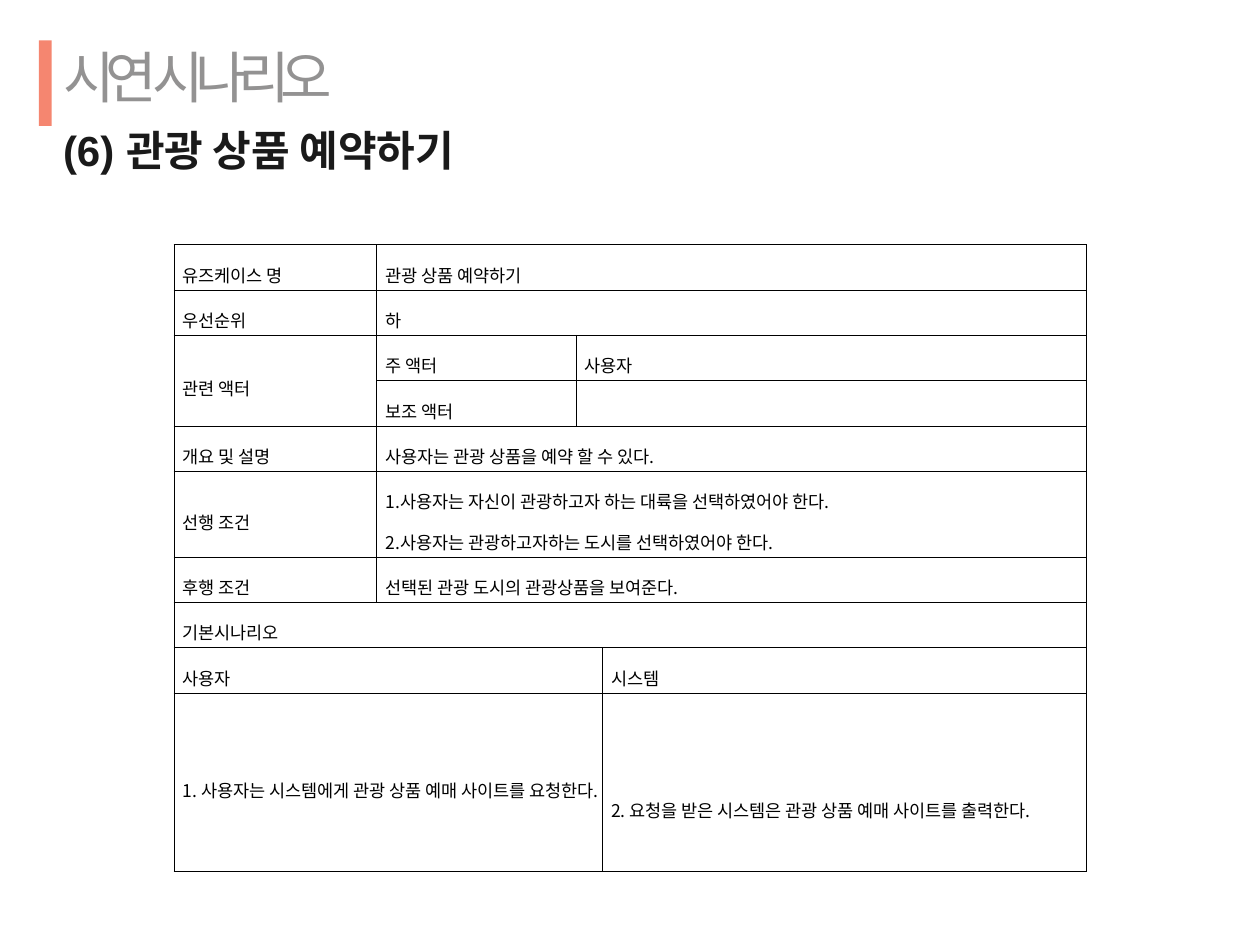
from dataclasses import dataclass

from lxml.etree import SubElement
from pptx import Presentation
from pptx.dml.color import RGBColor
from pptx.enum.shapes import MSO_SHAPE as Shape
from pptx.enum.text import MSO_ANCHOR as Anchor, MSO_AUTO_SIZE as AutoSize, PP_ALIGN as Align
from pptx.oxml.ns import qn
from pptx.util import Inches, Pt


@dataclass(frozen=True)
class Theme:
    accent: RGBColor = RGBColor(0xF5, 0x86, 0x70)
    heading: RGBColor = RGBColor(0x93, 0x92, 0x92)
    subheading: RGBColor = RGBColor(0x1A, 0x1A, 0x1A)
    body: RGBColor = RGBColor(0, 0, 0)
    border: str = "000000"
    border_width: float = 0.28
    heading_size: int = 32
    subheading_size: int = 24
    body_size: int = 10
    latin_font: str = "Arial"
    korean_font: str = "Noto Sans CJK KR"


THEME = Theme()


@dataclass(frozen=True)
class TextStyle:
    font: str
    size: int
    color: RGBColor
    bold: bool = False
    tracking: int = 0  # points between letters


@dataclass(frozen=True)
class TableEntry:
    row: int
    column: int
    text: str = ""
    columns: int = 1
    rows: int = 1
    top_margin: float = 0.02


HEADING = TextStyle(THEME.latin_font, THEME.heading_size, THEME.heading, tracking=-5)
SUBHEADING = TextStyle(THEME.latin_font, THEME.subheading_size, THEME.subheading, bold=True)
BODY = TextStyle(THEME.korean_font, THEME.body_size, THEME.body)

COLUMN_WIDTHS = [1.61, 1.58, 0.21, 3.84]
ROW_HEIGHTS = [0.36] * 5 + [0.67] + [0.36] * 3 + [1.42]
ENTRIES = [
    TableEntry(0, 0, "유즈케이스 명"),
    TableEntry(0, 1, "관광 상품 예약하기", columns=3),
    TableEntry(1, 0, "우선순위"),
    TableEntry(1, 1, "하", columns=3),
    TableEntry(2, 0, "관련 액터", rows=2),
    TableEntry(2, 1, "주 액터"),
    TableEntry(2, 2, "사용자", columns=2),
    TableEntry(3, 1, "보조 액터"),
    TableEntry(3, 2, columns=2),
    TableEntry(4, 0, "개요 및 설명"),
    TableEntry(4, 1, "사용자는 관광 상품을 예약 할 수 있다.", columns=3),
    TableEntry(5, 0, "선행 조건"),
    TableEntry(5, 1, "1.사용자는 자신이 관광하고자 하는 대륙을 선택하였어야 한다.\n"
                     "2.사용자는 관광하고자하는 도시를 선택하였어야 한다.", columns=3),
    TableEntry(6, 0, "후행 조건"),
    TableEntry(6, 1, "선택된 관광 도시의 관광상품을 보여준다.", columns=3),
    TableEntry(7, 0, "기본시나리오", columns=4),
    TableEntry(8, 0, "사용자", columns=3),
    TableEntry(8, 3, "시스템"),
    TableEntry(9, 0, "1. 사용자는 시스템에게 관광 상품 예매 사이트를 요청한다.", columns=3),
    TableEntry(9, 3, "2. 요청을 받은 시스템은 관광 상품 예매 사이트를 출력한다.", top_margin=0.34),
]


def style_paragraph(paragraph, style: TextStyle) -> None:
    font = paragraph.font
    font.name, font.size, font.bold = style.font, Pt(style.size), style.bold
    font.color.rgb = style.color
    # Letter spacing and the East Asian typeface have no public property
    properties = paragraph._p.pPr.find(qn("a:defRPr"))
    properties.set("spc", str(style.tracking * 100))
    east_asian = SubElement(properties, qn("a:ea"), typeface=THEME.korean_font)
    properties.find(qn("a:latin")).addnext(east_asian)


def add_borders(cell) -> None:
    properties = cell._tc.get_or_add_tcPr()
    for index, side in enumerate(("lnL", "lnR", "lnT", "lnB")):
        line = SubElement(properties, qn(f"a:{side}"), w=str(Pt(THEME.border_width)))
        fill = SubElement(line, qn("a:solidFill"))
        SubElement(fill, qn("a:srgbClr"), val=THEME.border)
        properties.insert(index, line)  # borders come before the fill


def add_accent_bar(slide) -> None:
    bar = slide.shapes.add_shape(
        Shape.RECTANGLE, Inches(0.31), Inches(0.32), Inches(0.1), Inches(0.68))
    bar.shadow.inherit = False
    bar.fill.solid()
    bar.fill.fore_color.rgb = THEME.accent
    bar.line.fill.background()


def fill_title(slide) -> None:
    title = slide.shapes.title
    title.left, title.top = Inches(0.49), Inches(0.36)
    title.width, title.height = Inches(6.57), Inches(2.59)
    frame = title.text_frame
    frame.word_wrap, frame.auto_size = True, AutoSize.NONE
    frame.vertical_anchor = Anchor.TOP
    frame.margin_left = Inches(0.01)
    frame.margin_top = frame.margin_right = frame.margin_bottom = 0
    frame.text = "시연 시나리오\n(6) 관광 상품 예약하기"
    for paragraph, style in zip(frame.paragraphs, (HEADING, SUBHEADING)):
        paragraph.alignment = Align.LEFT
        paragraph.line_spacing = Pt(37)
        style_paragraph(paragraph, style)


def fill_entry(table, entry: TableEntry) -> None:
    cell = table.cell(entry.row, entry.column)
    if entry.columns > 1 or entry.rows > 1:
        cell.merge(table.cell(entry.row + entry.rows - 1, entry.column + entry.columns - 1))
    cell.vertical_anchor = Anchor.MIDDLE
    cell.margin_left = cell.margin_right = Inches(0.07)
    cell.margin_top, cell.margin_bottom = Inches(entry.top_margin), Inches(0.02)
    cell.text_frame.text = entry.text
    for paragraph in cell.text_frame.paragraphs:
        paragraph.alignment = Align.JUSTIFY
        paragraph.line_spacing = 1.6
        style_paragraph(paragraph, BODY)


def add_use_case_table(slide) -> None:
    table = slide.shapes.add_table(
        len(ROW_HEIGHTS), len(COLUMN_WIDTHS), Inches(1.38), Inches(1.94),
        Inches(sum(COLUMN_WIDTHS)), Inches(sum(ROW_HEIGHTS))).table
    table.first_row = table.horz_banding = False
    for column, width in zip(table.columns, COLUMN_WIDTHS):
        column.width = Inches(width)
    for row, height in zip(table.rows, ROW_HEIGHTS):
        row.height = Inches(height)
    for cell in table.iter_cells():
        cell.fill.background()
        add_borders(cell)
    for entry in ENTRIES:
        fill_entry(table, entry)


def main() -> None:
    presentation = Presentation()
    presentation.slide_width, presentation.slide_height = Inches(10), Inches(7.5)
    slide = presentation.slides.add_slide(presentation.slide_layouts[5])

    # Heading with its accent bar
    add_accent_bar(slide)
    fill_title(slide)

    # Use case description
    add_use_case_table(slide)
    presentation.save("out.pptx")


if __name__ == "__main__":
    main()
